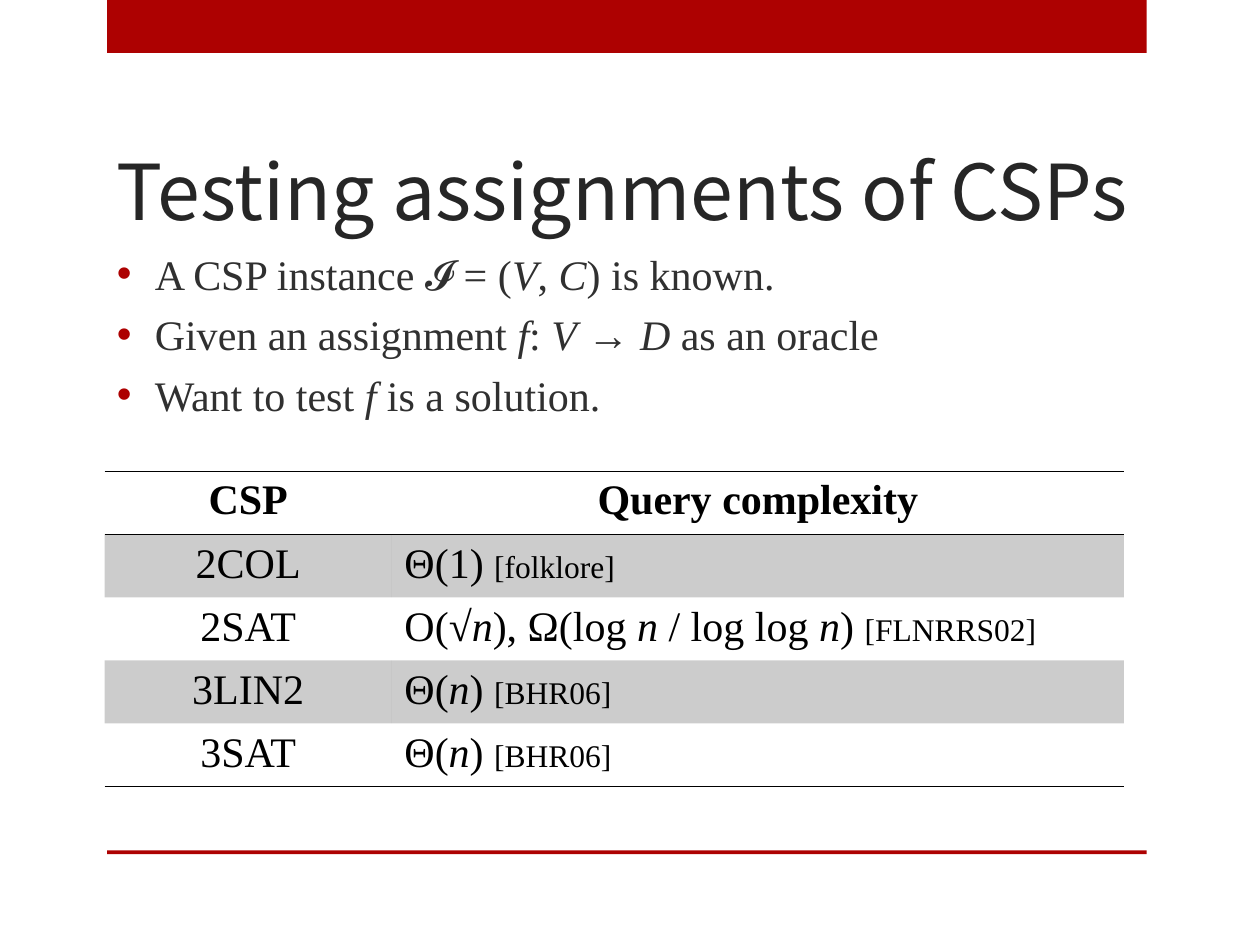
"""Build the slide on testing assignments of CSPs."""
from lxml.etree import SubElement
from pptx import Presentation
from pptx.dml.color import RGBColor
from pptx.enum.shapes import MSO_SHAPE
from pptx.enum.text import MSO_ANCHOR, PP_ALIGN
from pptx.oxml.ns import qn
from pptx.util import Inches, Pt

RED = RGBColor(0xAD, 0x01, 0x01)
TITLE_GREY = RGBColor(0x26, 0x26, 0x26)
BODY_GREY = RGBColor(0x30, 0x30, 0x30)
BLACK = RGBColor(0, 0, 0)
SERIF = "Times New Roman"


def write_text(paragraph, text, size=24, font=SERIF, color=BLACK, bold=False,
               align=PP_ALIGN.LEFT, citation=""):
    """Fill a paragraph; asterisks enclose italics and a citation is smaller."""
    paragraph.alignment = align
    pieces = [(piece, size, index % 2 == 1) for index, piece in enumerate(text.split("*"))]
    for piece, points, italic in pieces + [(citation, 18, False)]:
        if piece:
            run = paragraph.add_run()
            run.text = piece
            run.font.size = Pt(points)
            run.font.name = font
            run.font.color.rgb = color
            run.font.bold = bold
            run.font.italic = italic


def add_border(cell, side):
    """Draw a one-point black border on one side of a cell."""
    line = SubElement(cell._tc.get_or_add_tcPr(), qn(f"a:{side}"), w=str(Pt(1)))
    fill = SubElement(line, qn("a:solidFill"))
    SubElement(fill, qn("a:srgbClr"), val=str(BLACK))


presentation = Presentation()
presentation.slide_width = Inches(10)
presentation.slide_height = Inches(7.5)
slide = presentation.slides.add_slide(presentation.slide_layouts[6])

for top, height in [(0, 0.42), (6.75, 0.03)]:
    bar = slide.shapes.add_shape(MSO_SHAPE.RECTANGLE, Inches(0.85), Inches(top),
                                 Inches(8.25), Inches(height))
    bar.shadow.inherit = False
    bar.fill.solid()
    bar.fill.fore_color.rgb = RED
    bar.line.fill.background()

title = slide.shapes.add_textbox(Inches(0.83), Inches(0.75), Inches(8.25), Inches(1.17))
title.text_frame.word_wrap = True
title.text_frame.vertical_anchor = MSO_ANCHOR.BOTTOM
write_text(title.text_frame.paragraphs[0], "Testing assignments of CSPs",
           size=44, font="Noto Sans CJK JP", color=TITLE_GREY)

body = slide.shapes.add_textbox(Inches(0.83), Inches(1.92), Inches(8.25), Inches(4.83))
body.text_frame.word_wrap = True
statements = [
    "A CSP instance 𝓘 = (*V*, *C*) is known.",
    "Given an assignment *f*: *V* → *D *as an oracle",
    "Want to test *f* is a solution.",
]
for index, statement in enumerate(statements):
    paragraph = body.text_frame.paragraphs[0] if index == 0 else body.text_frame.add_paragraph()
    write_text(paragraph, statement, color=BODY_GREY)
    paragraph.space_before = Pt(5.8)
    properties = paragraph._p.get_or_add_pPr()
    properties.set("marL", str(Inches(0.3)))
    properties.set("indent", str(-Inches(0.3)))
    bullet_color = SubElement(properties, qn("a:buClr"))
    SubElement(bullet_color, qn("a:srgbClr"), val=str(RED))
    SubElement(properties, qn("a:buFont"), typeface="Arial")
    SubElement(properties, qn("a:buChar"), char="•")

rows = [
    ("CSP", "Query complexity", ""),
    ("2COL", "Θ(1) ", "[folklore]"),
    ("2SAT", "O(√*n*), Ω(log *n */ log log *n*) ", "[FLNRRS02]"),
    ("3LIN2", "Θ(*n*) ", "[BHR06]"),
    ("3SAT", "Θ(*n*) ", "[BHR06]"),
]
row_heights = [0.44, 0.44, 0.49, 0.44, 0.44]
table = slide.shapes.add_table(len(rows), 2, Inches(0.83), Inches(3.74),
                               Inches(8.09), Inches(sum(row_heights))).table
table.first_row = False
table.horz_banding = False
table._tbl.tblPr.find(qn("a:tableStyleId")).text = "{2D5ABB26-0587-4C30-8999-92F81FD0307C}"
for column, width in zip(table.columns, [2.28, 5.81]):
    column.width = Inches(width)

for row_index, (problem, complexity, citation) in enumerate(rows):
    table.rows[row_index].height = Inches(row_heights[row_index])
    header = row_index == 0
    problem_cell, complexity_cell = table.rows[row_index].cells
    write_text(problem_cell.text_frame.paragraphs[0], problem, bold=header,
               align=PP_ALIGN.CENTER)
    write_text(complexity_cell.text_frame.paragraphs[0], complexity, bold=header,
               align=PP_ALIGN.CENTER if header else PP_ALIGN.LEFT, citation=citation)
    for cell in (problem_cell, complexity_cell):
        if header:
            add_border(cell, "lnT")
        if header or row_index == len(rows) - 1:
            add_border(cell, "lnB")
        if row_index % 2 == 1:
            cell.fill.solid()
            cell.fill.fore_color.rgb = BLACK
            shade = cell._tc.tcPr.find(qn("a:solidFill")).find(qn("a:srgbClr"))
            SubElement(shade, qn("a:alpha"), val="20000")
        else:
            cell.fill.background()

presentation.save("out.pptx")
